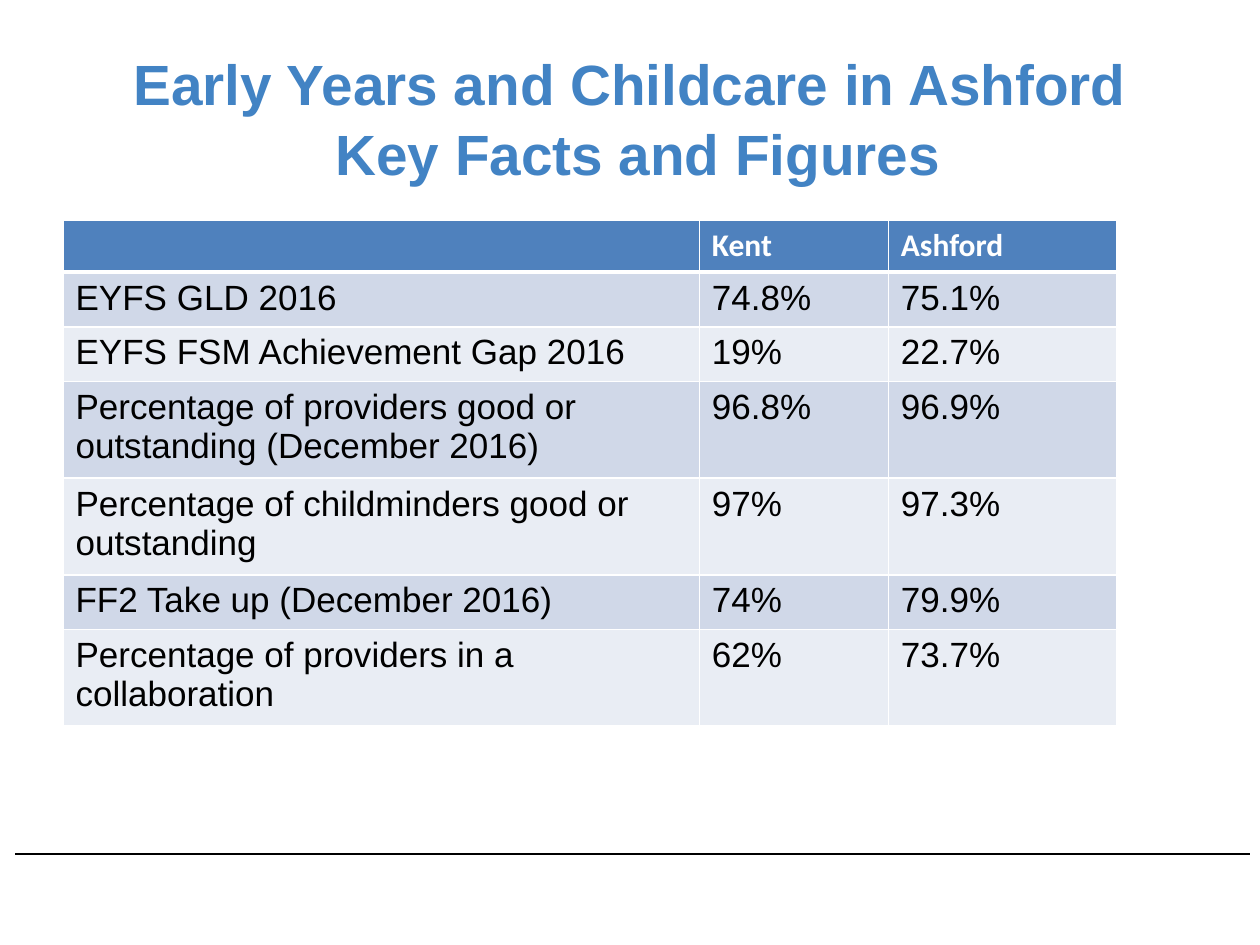
from dataclasses import dataclass

from lxml import etree
from pptx import Presentation
from pptx.dml.color import RGBColor
from pptx.enum.shapes import MSO_CONNECTOR
from pptx.enum.text import MSO_ANCHOR, PP_ALIGN
from pptx.oxml.ns import qn
from pptx.util import Inches, Pt

STRAIGHT = MSO_CONNECTOR.STRAIGHT
MIDDLE = MSO_ANCHOR.MIDDLE
CENTER = PP_ALIGN.CENTER


@dataclass(frozen=True)
class Theme:
    title: str = "4283C4"
    header: str = "4F81BD"
    bands: tuple = ("D0D8E8", "E9EDF4")
    white: str = "FFFFFF"
    black: str = "000000"
    body_font: str = "Arial"
    header_font: str = "Calibri"
    title_size: float = 32.4
    header_size: float = 18
    body_size: float = 20


THEME = Theme()

TITLE = "Early Years and Childcare in Ashford\v Key Facts and Figures"
FACTS = [
    ("", "Kent", "Ashford"),
    ("EYFS GLD 2016", "74.8%", "75.1%"),
    ("EYFS FSM Achievement Gap 2016", "19%", "22.7%"),
    ("Percentage of providers good or outstanding (December 2016)", "96.8%", "96.9%"),
    ("Percentage of childminders good or outstanding", "97%", "97.3%"),
    ("FF2 Take up (December 2016)", "74%", "79.9%"),
    ("Percentage of providers in a collaboration", "62%", "73.7%"),
]
COL_WIDTHS = (5.05, 1.5, 1.81)
ROW_HEIGHT = 0.41


def style_font(font, name, size, color, bold):
    font.name = name
    font.size = Pt(size)
    font.bold = bold
    font.color.rgb = RGBColor.from_string(color)


def set_borders(cell, bottom):
    """Draw white cell edges; they must come before the fill in tcPr."""
    tc_pr = cell._tc.get_or_add_tcPr()
    for i, (tag, width) in enumerate((("a:lnL", 1), ("a:lnR", 1), ("a:lnT", 1), ("a:lnB", bottom))):
        ln = etree.Element(qn(tag), w=str(Pt(width)))
        fill = etree.SubElement(ln, qn("a:solidFill"))
        etree.SubElement(fill, qn("a:srgbClr"), val=THEME.white)
        tc_pr.insert(i, ln)


def add_title(slide, left, top, width, height):
    box = slide.shapes.add_textbox(Inches(left), Inches(top), Inches(width), Inches(height))
    tf = box.text_frame
    tf.word_wrap = True
    tf.vertical_anchor = MIDDLE
    p = tf.paragraphs[0]
    p.text = TITLE
    p.alignment = CENTER
    p.line_spacing = 1.04
    style_font(p.font, THEME.body_font, THEME.title_size, THEME.title, True)


def add_facts_table(slide, left, top):
    table = slide.shapes.add_table(
        len(FACTS), len(COL_WIDTHS), Inches(left), Inches(top),
        Inches(sum(COL_WIDTHS)), Inches(ROW_HEIGHT * len(FACTS))).table
    for col, width in zip(table.columns, COL_WIDTHS):
        col.width = Inches(width)
    for r, values in enumerate(FACTS):
        table.rows[r].height = Inches(ROW_HEIGHT)
        is_header = r == 0
        color = THEME.header if is_header else THEME.bands[(r - 1) % 2]
        for c, value in enumerate(values):
            cell = table.cell(r, c)
            cell.fill.solid()
            cell.fill.fore_color.rgb = RGBColor.from_string(color)
            set_borders(cell, bottom=3 if is_header else 1)
            p = cell.text_frame.paragraphs[0]
            p.text = value
            if is_header:
                style_font(p.font, THEME.header_font, THEME.header_size, THEME.white, True)
            else:
                style_font(p.font, THEME.body_font, THEME.body_size, THEME.black, False)


def add_footer_rule(slide, left, top, width):
    line = slide.shapes.add_connector(
        STRAIGHT, Inches(left), Inches(top), Inches(left + width), Inches(top))
    line.line.color.rgb = RGBColor.from_string(THEME.black)
    line.line.width = Pt(1)
    etree.SubElement(line._element.spPr, qn("a:effectLst"))


def main():
    prs = Presentation()
    prs.slide_width, prs.slide_height = Inches(10), Inches(7.5)
    slide = prs.slides.add_slide(prs.slide_layouts[6])
    # Footer rule, heading, then the comparison table
    add_footer_rule(slide, 0.12, 6.78, 9.8)
    add_title(slide, 0.5, 0.3, 9, 1.25)
    add_facts_table(slide, 0.5, 1.75)
    prs.save("out.pptx")


if __name__ == "__main__":
    main()
